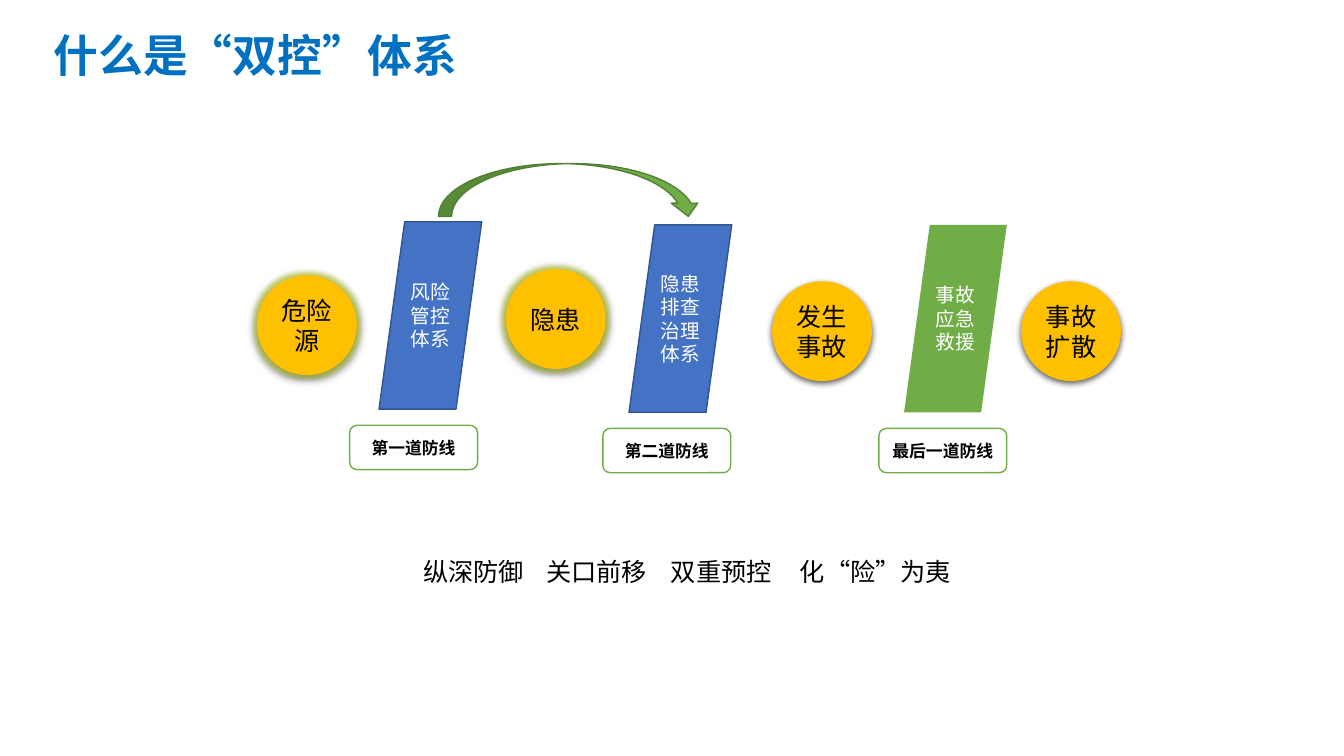
import pptx
import pptx.util
import pptx.dml.color
import pptx.enum.shapes
import pptx.enum.text
import pptx.oxml
import pptx.oxml.ns

Pt = pptx.util.Pt
SHAPE = pptx.enum.shapes.MSO_SHAPE
ALIGN = pptx.enum.text.PP_ALIGN
ANCHOR = pptx.enum.text.MSO_ANCHOR

TITLE = "什么是“双控”体系"
SLOGANS = ["纵深防御", "关口前移", "双重预控", "化“险”为夷"]
SLOGAN_STOPS = [88, 177, 269]

# text, left, top, glowing
STAGES = [
    ("危险源", 183.6, 196.6, True),
    ("隐患", 361.4, 192.2, True),
    ("发生事故", 551.5, 200.9, False),
    ("事故扩散", 729.4, 200.9, False),
]
# text, left, top, fill, outline, label, label left
BARRIERS = [
    ("风险管控体系", 270.7, 158.4, "blue", "navy", "第一道防线", 249.8),
    ("隐患排查治理体系", 449.3, 160.6, "blue", "navy", "第二道防线", 430.6),
    ("事故应急救援", 645.8, 160.6, "green", None, "最后一道防线", 627.8),
]
STAGE_SIZE = 71.3
BARRIER_WIDTH, BARRIER_HEIGHT = 73.4, 133.9
LABEL_WIDTH, LABEL_HEIGHT = 91.4, 31.7
LABEL_GAP = 11.5

COLORS = {
    "title": "0070C0", "black": "000000", "white": "FFFFFF", "amber": "FFC000",
    "blue": "4472C4", "navy": "325491", "green": "70AD47",
    "dark green": "538035", "glow": "CCDC30",
}
CJK = "Noto Sans CJK SC"


def color(name):
    return pptx.dml.color.RGBColor.from_string(COLORS[name])


def write(shape, text, size, ink, font="Arial", bold=False, align=ALIGN.CENTER, inset=7.2):
    frame = shape.text_frame
    frame.text = text
    frame.word_wrap = True
    frame.auto_size = pptx.enum.text.MSO_AUTO_SIZE.NONE
    frame.vertical_anchor = ANCHOR.MIDDLE
    frame.margin_left = frame.margin_right = Pt(inset)
    frame.margin_top = frame.margin_bottom = Pt(3.6)
    para = frame.paragraphs[0]
    para.alignment = align
    for span in para.runs:
        span.font.size = Pt(size)
        span.font.bold = bold
        span.font.name = font
        span.font.color.rgb = color(ink)
        properties = span._r.get_or_add_rPr()
        properties.set("lang", "zh-CN")
        east_asian = pptx.oxml.parse_xml(
            f'<a:ea {pptx.oxml.ns.nsdecls("a")} typeface="{CJK}"/>')
        properties.find(pptx.oxml.ns.qn("a:latin")).addnext(east_asian)
    return para


def add_box(page, kind, left, top, width, height, fill, outline=None):
    box = page.shapes.add_shape(kind, Pt(left), Pt(top), Pt(width), Pt(height))
    box.shadow.inherit = False
    box.fill.solid()
    box.fill.fore_color.rgb = color(fill)
    if outline:
        box.line.color.rgb = color(outline)
        box.line.width = Pt(1)
    else:
        box.line.fill.background()
    return box


def add_effects(box, glowing):
    """Give a stage its drop shadow and, if asked, a glow."""
    glow = (f'<a:glow rad="{Pt(5)}"><a:srgbClr val="{COLORS["glow"]}">'
            '<a:alpha val="50000"/></a:srgbClr></a:glow>') if glowing else ""
    effects = pptx.oxml.parse_xml(
        f'<a:effectLst {pptx.oxml.ns.nsdecls("a")}>{glow}'
        f'<a:outerShdw blurRad="{Pt(4.5)}" dist="{Pt(1.5)}" dir="5400000" '
        f'algn="ctr" rotWithShape="0"><a:srgbClr val="{COLORS["black"]}">'
        '<a:alpha val="63000"/></a:srgbClr></a:outerShdw></a:effectLst>')
    empty = box._element.spPr.find(pptx.oxml.ns.qn("a:effectLst"))
    empty.getparent().replace(empty, effects)


def add_tab_stops(para, stops):
    tabs = "".join(f'<a:tab pos="{Pt(stop)}" algn="l"/>' for stop in stops)
    para._p.get_or_add_pPr().append(pptx.oxml.parse_xml(
        f'<a:tabLst {pptx.oxml.ns.nsdecls("a")}>{tabs}</a:tabLst>'))


def main():
    deck = pptx.Presentation()
    deck.slide_width, deck.slide_height = Pt(960), Pt(540)
    page = deck.slides.add_slide(deck.slide_layouts[5])

    title = page.shapes.title
    title.left, title.top, title.width, title.height = Pt(31), Pt(15.8), Pt(561.6), Pt(46)
    write(title, TITLE, 32, "title", CJK, True, ALIGN.LEFT)

    for text, left, top, glowing in STAGES:
        stage = add_box(page, SHAPE.OVAL, left, top, STAGE_SIZE, STAGE_SIZE, "amber")
        add_effects(stage, glowing)
        write(stage, text, 18, "black", inset=5)

    for text, left, top, fill, outline, label_text, label_left in BARRIERS:
        barrier = add_box(page, SHAPE.PARALLELOGRAM, left, top,
                          BARRIER_WIDTH, BARRIER_HEIGHT, fill, outline)
        write(barrier, text, 14, "white")
        label = add_box(page, SHAPE.ROUNDED_RECTANGLE, label_left,
                        top + BARRIER_HEIGHT + LABEL_GAP,
                        LABEL_WIDTH, LABEL_HEIGHT, "white", "green")
        write(label, label_text, 12, "black", CJK, True, inset=4)

    add_box(page, SHAPE.CURVED_DOWN_ARROW, 313.2, 116.9, 187.9, 37.7, "green", "dark green")

    slogan = page.shapes.add_textbox(Pt(295.2), Pt(393.8), Pt(416.2), Pt(29))
    para = write(slogan, "\t".join(SLOGANS), 18, "black", align=ALIGN.LEFT)
    add_tab_stops(para, SLOGAN_STOPS)

    deck.save("out.pptx")


if __name__ == "__main__":
    main()
